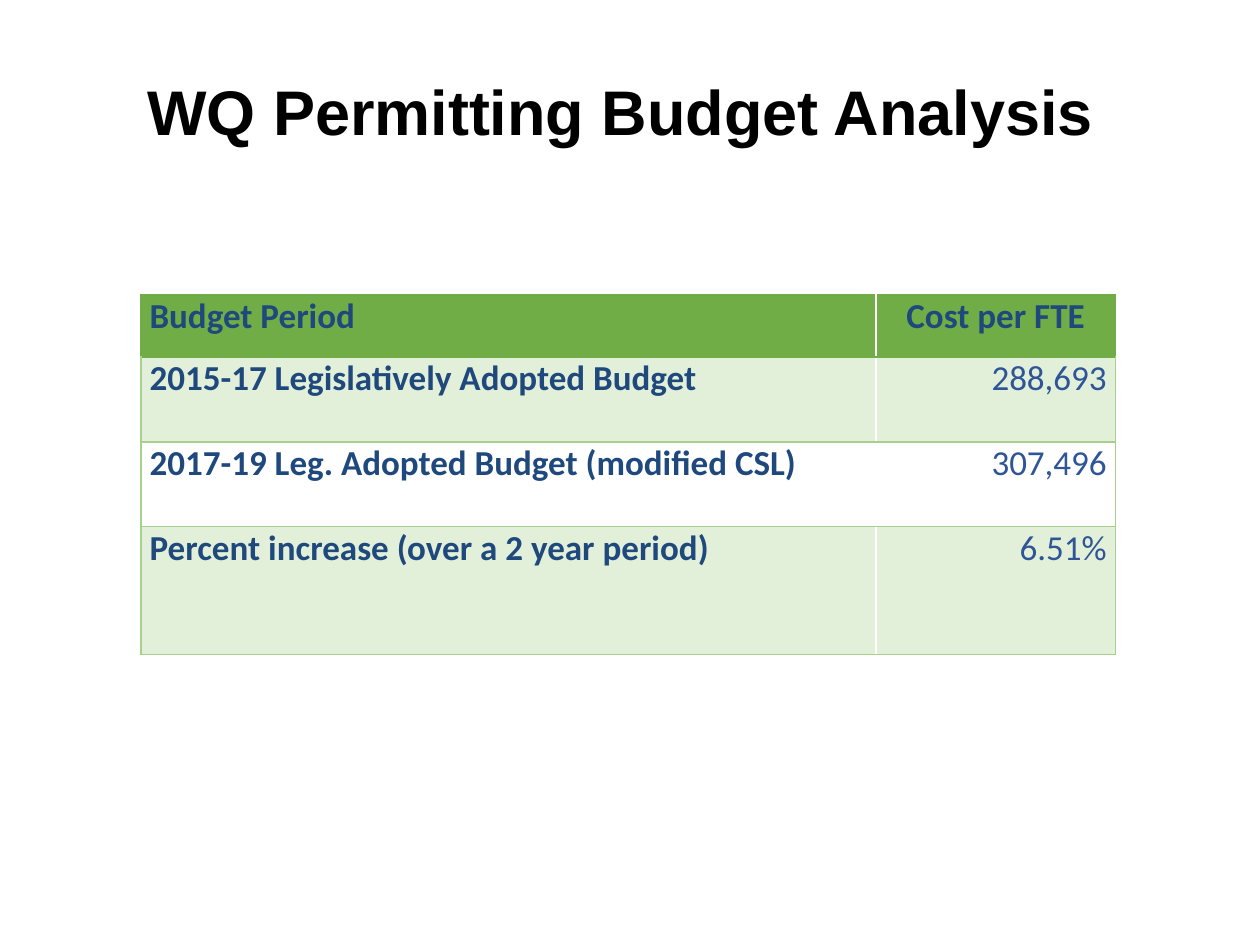
from pptx import Presentation
from pptx.dml.color import RGBColor
from pptx.enum.text import MSO_ANCHOR as Anchor, MSO_AUTO_SIZE as Fit, PP_ALIGN as Align
from pptx.util import Pt
from lxml.etree import fromstring

NS = "http://schemas.openxmlformats.org/drawingml/2006/main"
GREEN, PALE, EDGE = "70AD47", "E2EFD9", "A8D08D"
NAVY, BLUE = "1F497D", "2F5597"
ROWS = [
    ("Budget Period", "Cost per FTE"),
    ("2015-17 Legislatively Adopted Budget", "288,693"),
    ("2017-19 Leg. Adopted Budget (modified CSL)", "307,496"),
    ("Percent increase (over a 2 year period)", "6.51%"),
]
WIDTHS = (420, 137)
HEIGHTS = (35.5, 48.5, 48.5, 73)


def style(para, face, size, color, bold, align):
    para.alignment = align
    font = para.font
    font.name, font.size, font.bold = face, Pt(size), bold
    font.color.rgb = RGBColor.from_string(color)


def add_title(slide, text):
    title = slide.shapes.title
    title.left, title.top, title.width, title.height = Pt(77), Pt(38), Pt(564), Pt(373)
    frame = title.text_frame
    frame.text = text
    frame.word_wrap = True
    frame.auto_size = Fit.NONE
    frame.vertical_anchor = Anchor.TOP
    para = frame.paragraphs[0]
    para.space_before = Pt(7)
    style(para, "Arial", 36, "000000", True, Align.LEFT)


def set_edges(cell, edges):
    props = cell._tc.get_or_add_tcPr()
    for spot, (side, color) in enumerate(edges):
        props.insert(spot, fromstring(
            f'<a:ln{side} xmlns:a="{NS}" w="{Pt(1)}"><a:solidFill>'
            f'<a:srgbClr val="{color}"/></a:solidFill></a:ln{side}>'))


def fill_cell(cell, text, row, col):
    head = row == 0
    cell.text = text
    cell.margin_left = cell.margin_right = Pt(5)
    cell.margin_top = cell.margin_bottom = 0
    cell.vertical_anchor = Anchor.TOP
    if col == 0:
        align = Align.LEFT
    else:
        align = Align.CENTER if head else Align.RIGHT
    bold = head or col == 0
    style(cell.text_frame.paragraphs[0], "Calibri", 20, NAVY if bold else BLUE, bold, align)
    if row == 2:
        cell.fill.background()
    else:
        cell.fill.solid()
        cell.fill.fore_color.rgb = RGBColor.from_string(GREEN if head else PALE)
    edge = GREEN if head else EDGE
    top = GREEN if row < 2 else EDGE
    set_edges(cell, [("R" if col else "L", edge), ("T", top), ("B", edge)])


def add_grid(slide):
    frame = slide.shapes.add_table(
        len(ROWS), len(WIDTHS), Pt(80.5), Pt(168.5), Pt(sum(WIDTHS)), Pt(sum(HEIGHTS)))
    table = frame.table
    for col, width in zip(table.columns, WIDTHS):
        col.width = Pt(width)
    for row, height in zip(table.rows, HEIGHTS):
        row.height = Pt(height)
    for row, texts in enumerate(ROWS):
        for col, text in enumerate(texts):
            fill_cell(table.cell(row, col), text, row, col)


def main():
    deck = Presentation()
    deck.slide_width, deck.slide_height = Pt(720), Pt(540)
    slide = deck.slides.add_slide(deck.slide_layouts[5])
    add_title(slide, "WQ Permitting Budget Analysis")
    add_grid(slide)
    deck.save("out.pptx")


if __name__ == "__main__":
    main()
